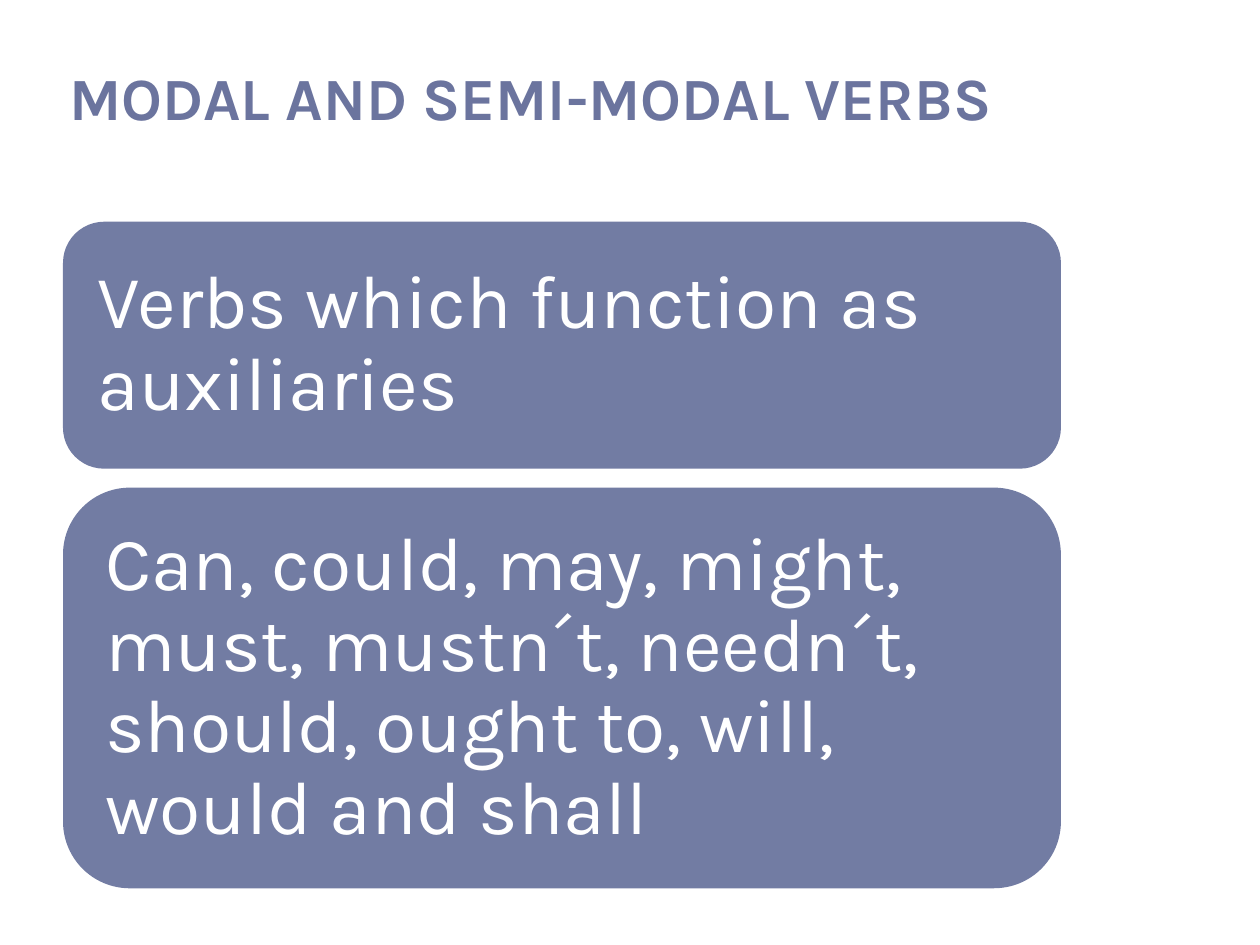
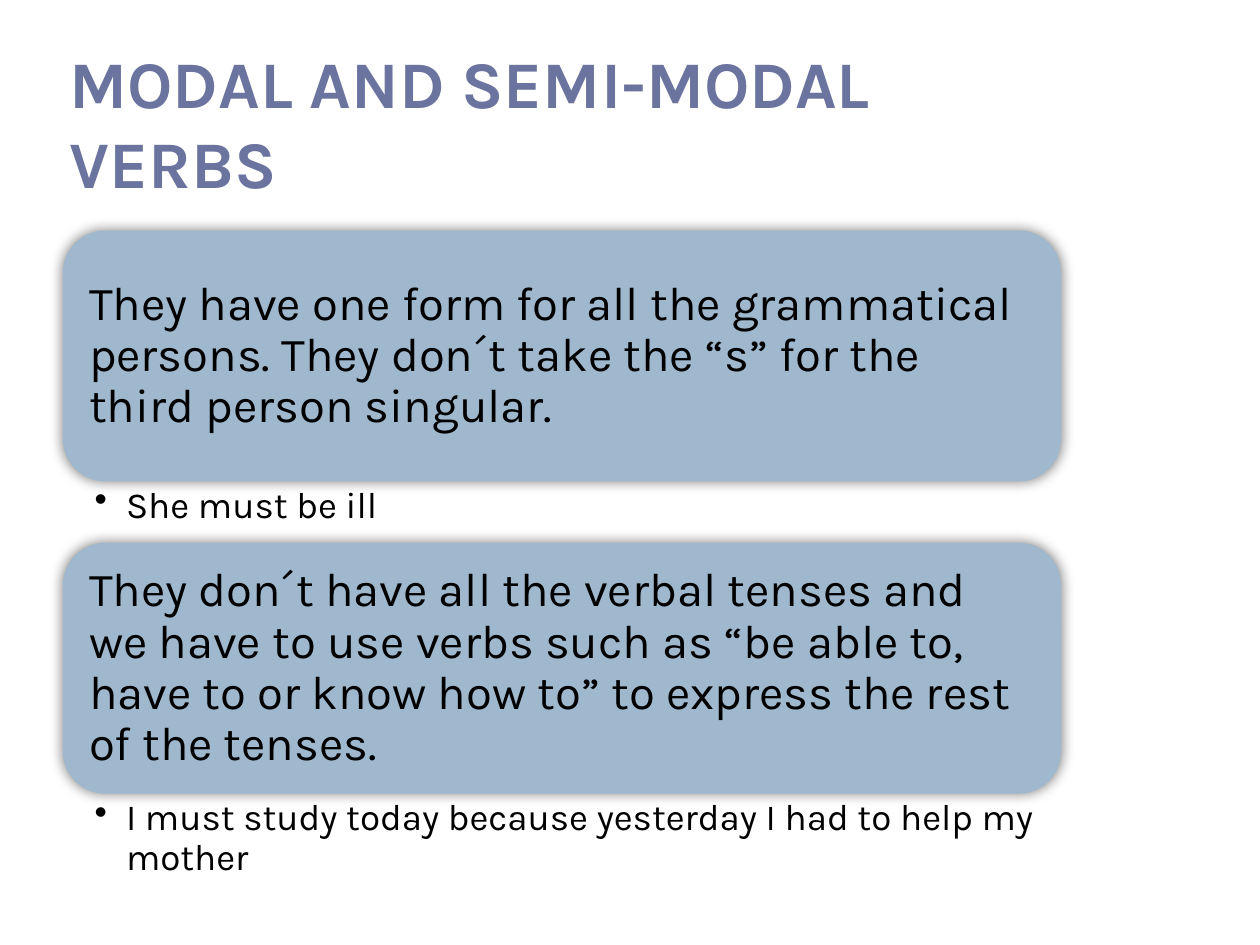
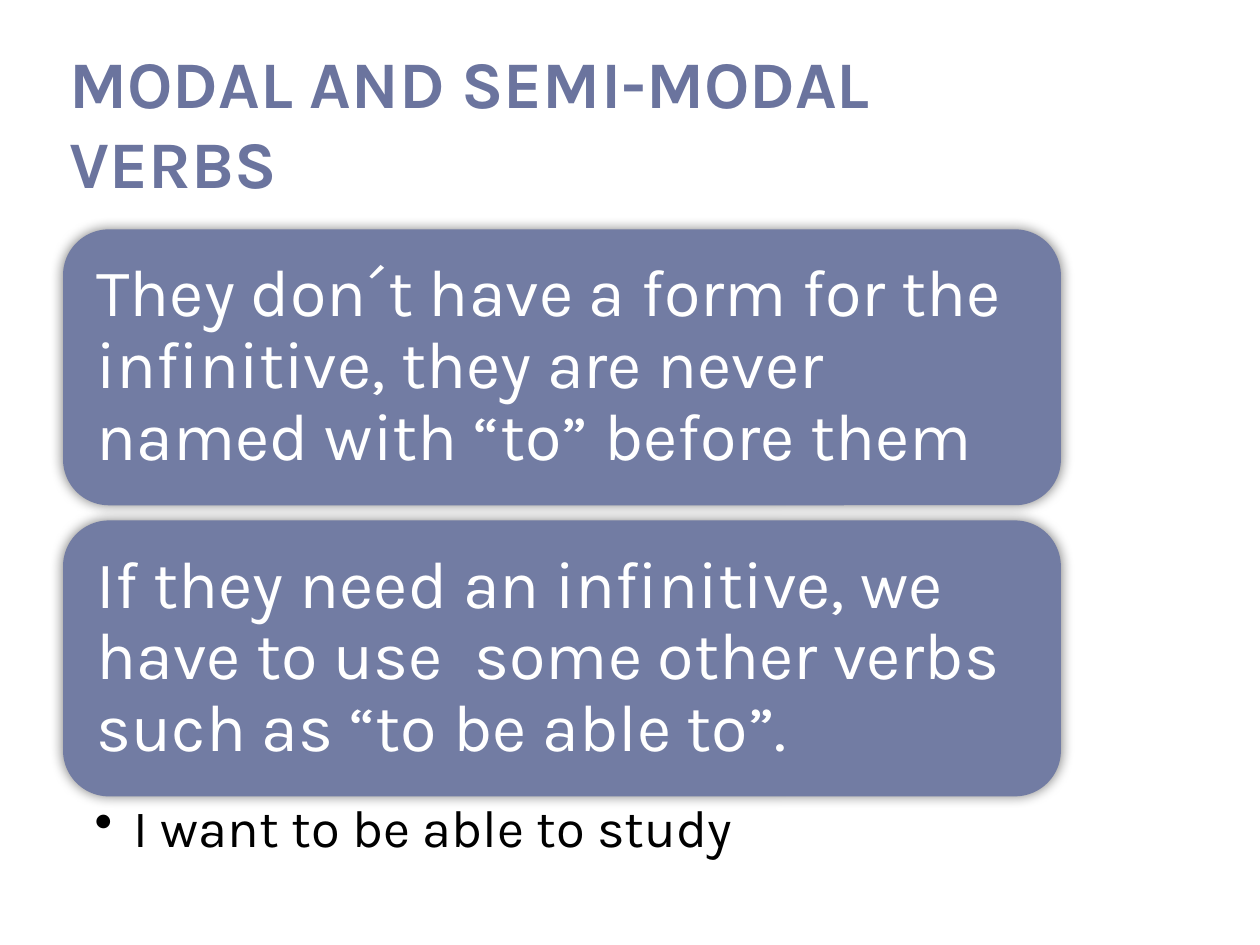
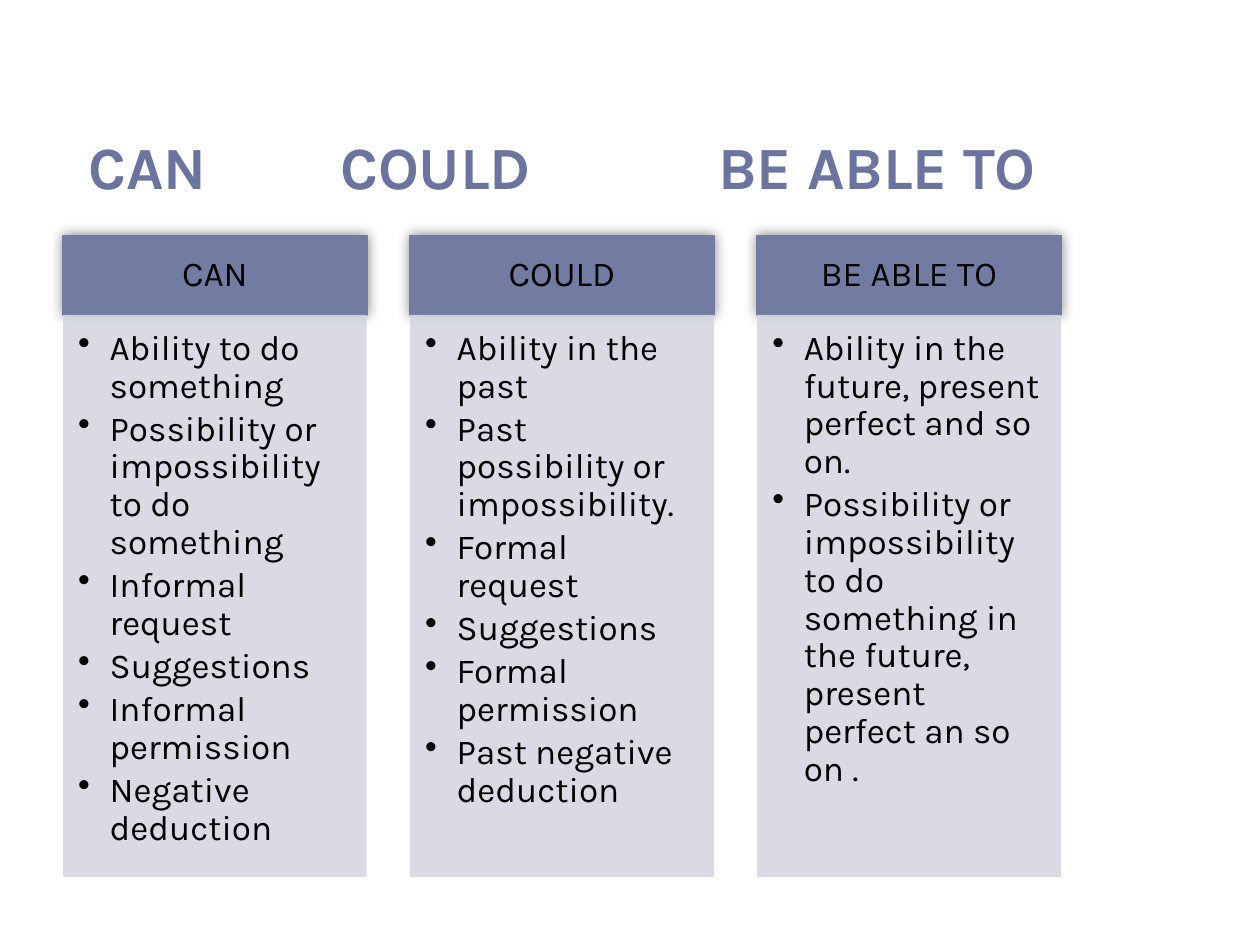
from lxml.etree import SubElement
from pptx import Presentation
from pptx.dml.color import RGBColor
from pptx.enum.shapes import MSO_SHAPE
from pptx.enum.text import MSO_ANCHOR, PP_ALIGN
from pptx.oxml.ns import qn
from pptx.util import Inches, Pt

COLORS = {
    "title": "6B749E",
    "indigo": "727CA3",
    "sky": "9FB8CD",
    "panel": "D5D7E0",
    "black": "000000",
    "white": "FFFFFF",
}
FONT = "Karla"
WIDTH, HEIGHT = Inches(10), Inches(7.5)

# Shares of the slide, in percent
CONTENT_LEFT, CONTENT_WIDTH = 5, 79.2
TITLE_TOP, TITLE_HEIGHT = 4.67, 16.67

COLUMN_COUNT = 3
COLUMN_WIDTH = CONTENT_WIDTH / (COLUMN_COUNT + (COLUMN_COUNT - 1) / 7)
COLUMN_PITCH = COLUMN_WIDTH * 8 / 7

TOPIC = "MODAL AND SEMI-MODAL VERBS"
USES = {
    "CAN": [
        "Ability to do something",
        "Possibility or impossibility to do something",
        "Informal request",
        "Suggestions",
        "Informal permission",
        "Negative deduction",
    ],
    "COULD": [
        "Ability in the past",
        "Past possibility or impossibility.",
        "Formal request",
        "Suggestions",
        "Formal permission",
        "Past negative deduction",
    ],
    "BE ABLE TO": [
        "Ability in the future, present perfect and so on.",
        "Possibility or impossibility to do something in the future, "
        "present perfect an so on .",
    ],
}


def color(name):
    return RGBColor.from_string(COLORS[name])


def place(left, top, width, height):
    """Turn percentages of the slide into lengths."""
    return (int(WIDTH * left / 100), int(HEIGHT * top / 100),
            int(WIDTH * width / 100), int(HEIGHT * height / 100))


def add_slide(presentation):
    return presentation.slides.add_slide(presentation.slide_layouts[6])


def set_frame(shape, insets, anchor):
    """Insets are left, top, right, bottom in inches."""
    frame = shape.text_frame
    frame.word_wrap = True
    frame.vertical_anchor = anchor
    (frame.margin_left, frame.margin_top,
     frame.margin_right, frame.margin_bottom) = map(Inches, insets)
    return frame


def add_bullet(paragraph, indent):
    properties = paragraph._p.get_or_add_pPr()
    properties.set("marL", str(Inches(indent)))
    properties.set("indent", str(-Inches(indent)))
    SubElement(properties, qn("a:buChar"), char="•")


def add_tabs(paragraph, stops):
    tabs = SubElement(paragraph._p.get_or_add_pPr(), qn("a:tabLst"))
    for stop in stops:
        SubElement(tabs, qn("a:tab"), pos=str(Inches(stop)), algn="l")


def write(frame, texts, size, color_name, bold=False, spacing=0.9,
          align=PP_ALIGN.LEFT, bullet_indent=None, space_after=0, tabs=()):
    for index, text in enumerate(texts):
        paragraph = frame.add_paragraph() if index else frame.paragraphs[0]
        paragraph.alignment = align
        paragraph.line_spacing = spacing
        paragraph.space_after = Pt(space_after)
        if bullet_indent:
            add_bullet(paragraph, bullet_indent)
        if tabs:
            add_tabs(paragraph, tabs)
        run = paragraph.add_run()
        run.text = text
        run.font.name = FONT
        run.font.size = Pt(size)
        run.font.bold = bold
        run.font.color.rgb = color(color_name)


def add_title(slide, text, size, left_inset=0.05, bottom_inset=0, tabs=()):
    box = slide.shapes.add_textbox(
        *place(CONTENT_LEFT, TITLE_TOP, CONTENT_WIDTH, TITLE_HEIGHT))
    frame = set_frame(box, (left_inset, 0, 0.05, bottom_inset), MSO_ANCHOR.BOTTOM)
    write(frame, [text], size, "title", bold=True, spacing=1.0, tabs=tabs)


def add_block(slide, preset, bounds, fill, line=None, glow=False):
    shape = slide.shapes.add_shape(preset, *place(*bounds))
    shape.fill.solid()
    shape.fill.fore_color.rgb = color(fill)
    if line:
        shape.line.color.rgb = color(line)
        shape.line.width = Pt(1)
    else:
        shape.line.fill.background()
    shape.shadow.inherit = False
    if glow:
        add_glow(shape)
    return shape


def add_glow(shape):
    """Soft dark shadow on every side."""
    effects = shape._element.spPr.find(qn("a:effectLst"))
    shadow = SubElement(effects, qn("a:outerShdw"), blurRad=str(Pt(7.5)),
                        dist="0", dir="0", algn="ctr", rotWithShape="0")
    shade = SubElement(shadow, qn("a:srgbClr"), val=COLORS["black"])
    SubElement(shade, qn("a:alpha"), val="50000")


def set_opacity(shape, percent):
    fill_color = shape._element.spPr.find(qn("a:solidFill"))[0]
    SubElement(fill_color, qn("a:alpha"), val=str(percent * 1000))


def add_cards(slide, top, cards, size, inset, fill, text_color, gap=0, glow=True,
              example_size=None, example_indent=None, example_insets=None):
    """Stack cards downwards; each is text, height, example, example height."""
    for text, height, example, example_height in cards:
        card = add_block(slide, MSO_SHAPE.ROUNDED_RECTANGLE,
                         (CONTENT_LEFT, top, CONTENT_WIDTH, height), fill, glow=glow)
        write(set_frame(card, [inset] * 4, MSO_ANCHOR.MIDDLE), [text], size, text_color)
        top += height
        if example:
            box = slide.shapes.add_textbox(
                *place(CONTENT_LEFT, top, CONTENT_WIDTH, example_height))
            frame = set_frame(box, example_insets, MSO_ANCHOR.TOP)
            write(frame, [example], example_size, "black",
                  bullet_indent=example_indent)
            top += example_height
        else:
            top += gap


def add_use_column(slide, index, verb, uses):
    left = CONTENT_LEFT + index * COLUMN_PITCH
    top, header_height, body_height = 24.93, 8.4, 59.47
    header = add_block(slide, MSO_SHAPE.RECTANGLE,
                       (left, top, COLUMN_WIDTH, header_height),
                       "indigo", line="indigo", glow=True)
    write(set_frame(header, (0.16, 0.09, 0.16, 0.09), MSO_ANCHOR.MIDDLE),
          [verb], 20, "black", align=PP_ALIGN.CENTER)
    body = add_block(slide, MSO_SHAPE.RECTANGLE,
                     (left, top + header_height, COLUMN_WIDTH, body_height), "panel")
    set_opacity(body, 90)
    write(set_frame(body, (0.12, 0.12, 0.16, 0.17), MSO_ANCHOR.TOP),
          uses, 20, "black", bullet_indent=0.25, space_after=3)


def build_definition(presentation):
    slide = add_slide(presentation)
    add_title(slide, TOPIC, 34.2, bottom_inset=0.55)
    add_cards(slide, 23.47, [
        ("Verbs which function as auxiliaries", 26.13, None, 0),
        ("Can, could, may, might, must, mustn´t, needn´t, should, ought to, "
         "will, would and shall", 42.4, None, 0),
    ], 43, 0.18, "indigo", "white", gap=2, glow=False)


def build_forms(presentation):
    slide = add_slide(presentation)
    add_title(slide, TOPIC, 38)
    add_cards(slide, 24.4, [
        ("They have one form for all the grammatical persons. They don´t take "
         "the “s” for the third person singular.", 26.53, "She must be ill", 6.53),
        ("They don´t have all the verbal tenses and we have to use verbs such as "
         "“be able to, have to or know how to” to express the rest of the tenses.",
         26.53, "I must study today because yesterday I had to help my mother", 9.2),
    ], 27, 0.11, "sky", "black", example_size=21, example_indent=0.25,
        example_insets=(0.25, 0.04, 0.21, 0.04))


def build_infinitive(presentation):
    slide = add_slide(presentation)
    add_title(slide, TOPIC, 38)
    add_cards(slide, 24.27, [
        ("They don´t have a form for the infinitive, they are never named with "
         "“to” before them", 29.2, None, 0),
        ("If they need an infinitive, we have to use  some other verbs such as "
         "“to be able to”.", 29.2, "I want to be able to study", 9.2),
    ], 38, 0.16, "indigo", "white", gap=1.6, example_size=30, example_indent=0.31,
        example_insets=(0.25, 0.05, 0.3, 0.05))


def build_uses(presentation):
    slide = add_slide(presentation)
    add_title(slide, "\t".join(USES), 34.2, left_inset=0.2, tabs=(2, 5))
    for index, (verb, uses) in enumerate(USES.items()):
        add_use_column(slide, index, verb, uses)


def main():
    presentation = Presentation()
    presentation.slide_width, presentation.slide_height = WIDTH, HEIGHT
    build_definition(presentation)
    build_forms(presentation)
    build_infinitive(presentation)
    build_uses(presentation)
    presentation.save("out.pptx")


if __name__ == "__main__":
    main()
